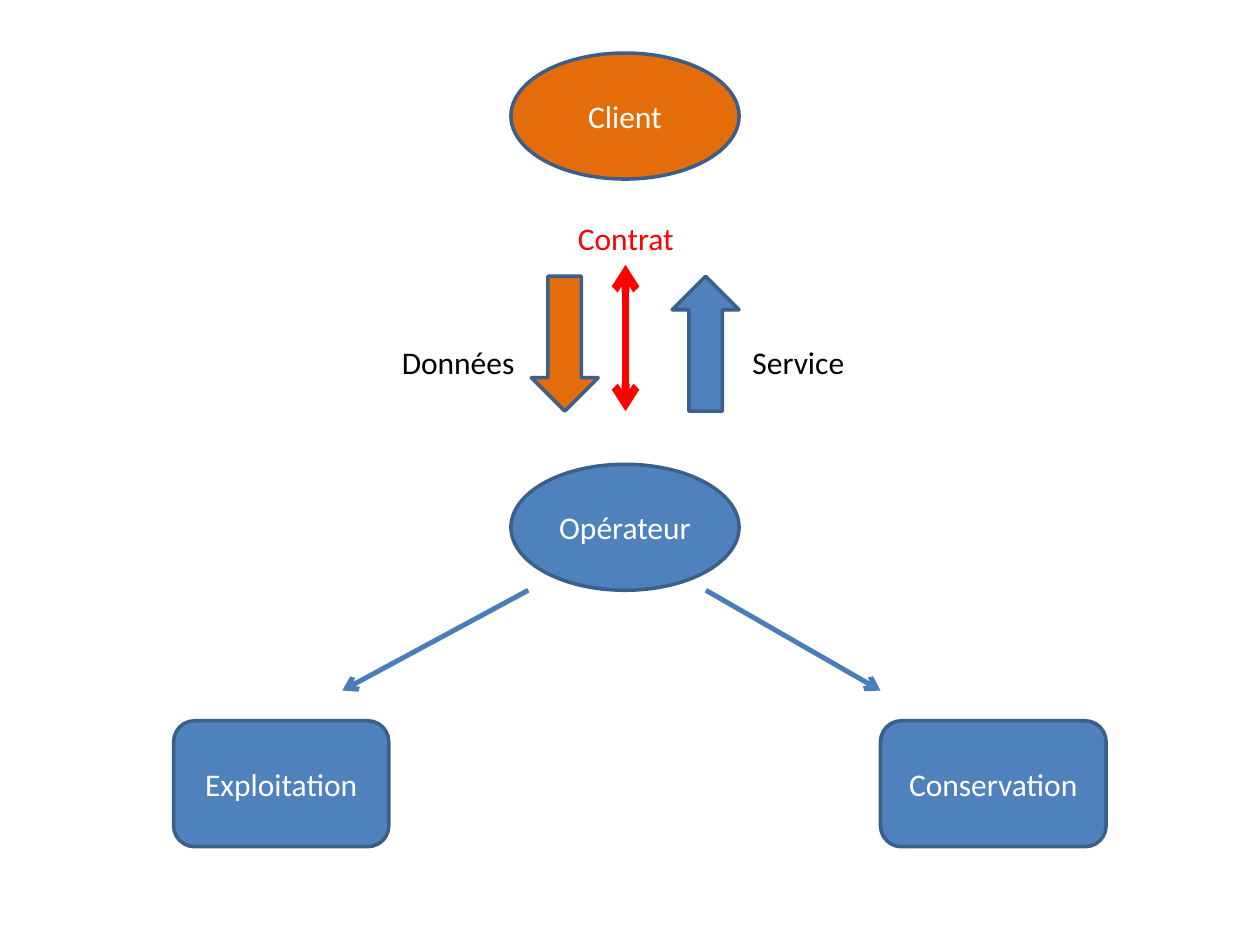
from lxml import etree
from pptx import Presentation
from pptx.dml.color import RGBColor
from pptx.enum.shapes import MSO_CONNECTOR, MSO_SHAPE
from pptx.enum.text import MSO_ANCHOR, MSO_AUTO_SIZE, PP_ALIGN
from pptx.oxml.ns import qn
from pptx.util import Cm, Pt

OVAL, ROUNDED = MSO_SHAPE.OVAL, MSO_SHAPE.ROUNDED_RECTANGLE
DOWN, UP = MSO_SHAPE.DOWN_ARROW, MSO_SHAPE.UP_ARROW
STRAIGHT, FIT = MSO_CONNECTOR.STRAIGHT, MSO_AUTO_SIZE.SHAPE_TO_FIT_TEXT
CENTER, LEFT, MIDDLE, TOP = PP_ALIGN.CENTER, PP_ALIGN.LEFT, MSO_ANCHOR.MIDDLE, MSO_ANCHOR.TOP

COLORS = {
    "orange": "E46C0A", "blue": "4F81BD", "outline": "3A5F8B", "link": "4A7EBB",
    "red": "FF0000", "white": "FFFFFF", "black": "000000",
}
NODE_H = 2.54


def rgb(name):
    """Return the named colour."""
    return RGBColor.from_string(COLORS[name])


def write(sp, text, color, align, anchor):
    """Put one line of text into a shape."""
    tf = sp.text_frame
    tf.vertical_anchor = anchor
    p = tf.paragraphs[0]
    p.text = text
    p.alignment = align
    p.font.name = "Calibri"
    p.font.size = Pt(18)
    p.font.color.rgb = rgb(color)


def add_block(s, kind, box, fill, text=None):
    """Add a filled, outlined shape with optional centred text."""
    sp = s.shapes.add_shape(kind, *map(Cm, box))
    sp.shadow.inherit = False
    sp.fill.solid()
    sp.fill.fore_color.rgb = rgb(fill)
    sp.line.color.rgb = rgb("outline")
    sp.line.width = Pt(2)
    if text:
        write(sp, text, "white", CENTER, MIDDLE)


def add_label(s, text, x, y, w, color="black"):
    """Add an unwrapped one-line label that fits its text."""
    sp = s.shapes.add_textbox(Cm(x), Cm(y), Cm(w), Cm(1.02))
    sp.text_frame.word_wrap = False
    sp.text_frame.auto_size = FIT
    write(sp, text, color, LEFT, TOP)


def add_arrow(s, start, end, color, width, ends=("tailEnd",)):
    """Add a straight line with open arrowheads at the given ends."""
    cn = s.shapes.add_connector(STRAIGHT, *map(Cm, start + end))
    cn.line.color.rgb = rgb(color)
    cn.line.width = Pt(width)
    ln = cn.line._get_or_add_ln()
    for tag in ends:
        etree.SubElement(ln, qn(f"a:{tag}"), type="arrow")
    etree.SubElement(cn._element.spPr, qn("a:effectLst"))


def add_exchange(s, x, y, w, h):
    """Draw the contract, data and service exchange in a box."""
    arrow_w, arrow_h = 1.35, 2.72
    arrow_y = y + h - arrow_h
    label_y = arrow_y + 1.22
    add_block(s, DOWN, (x + 2.86, arrow_y, arrow_w, arrow_h), "orange")
    add_block(s, UP, (x + 5.7, arrow_y, arrow_w, arrow_h), "blue")
    add_label(s, "Données", x, label_y, 2.8)
    add_label(s, "Service", x + w - 2.36, label_y, 2.36)
    mid = x + 4.76
    add_arrow(s, (mid, arrow_y - 0.23), (mid, y + h), "red", 4.5, ("headEnd", "tailEnd"))
    add_label(s, "Contrat", x + 3.55, y, 2.44, "red")


def add_operations(s, x, y, w, h):
    """Draw the operator and its two activities in a box."""
    add_block(s, OVAL, (x + 6.8, y, 4.6, NODE_H), "blue", "Opérateur")
    box_y = y + h - NODE_H
    left_w, right_w = 4.34, 4.55
    right_x = x + w - right_w
    add_block(s, ROUNDED, (x, box_y, left_w, NODE_H), "blue", "Exploitation")
    add_block(s, ROUNDED, (right_x, box_y, right_w, NODE_H), "blue", "Conservation")
    for start_x, end_x in ((x + 7.15, x + 3.4), (x + 10.73, right_x)):
        add_arrow(s, (start_x, y + NODE_H), (end_x, box_y - 0.61), "link", 2.83)


def main():
    """Build and save the slide."""
    prs = Presentation()
    prs.slide_width, prs.slide_height = Cm(25.4), Cm(19.05)
    s = prs.slides.add_slide(prs.slide_layouts[6])
    add_block(s, OVAL, (10.3, 1.07, 4.6, NODE_H), "orange", "Client")
    add_exchange(s, 7.85, 4.29, 9.43, 4)
    add_operations(s, 3.5, 9.36, 18.8, 7.71)
    prs.save("out.pptx")


if __name__ == "__main__":
    main()
